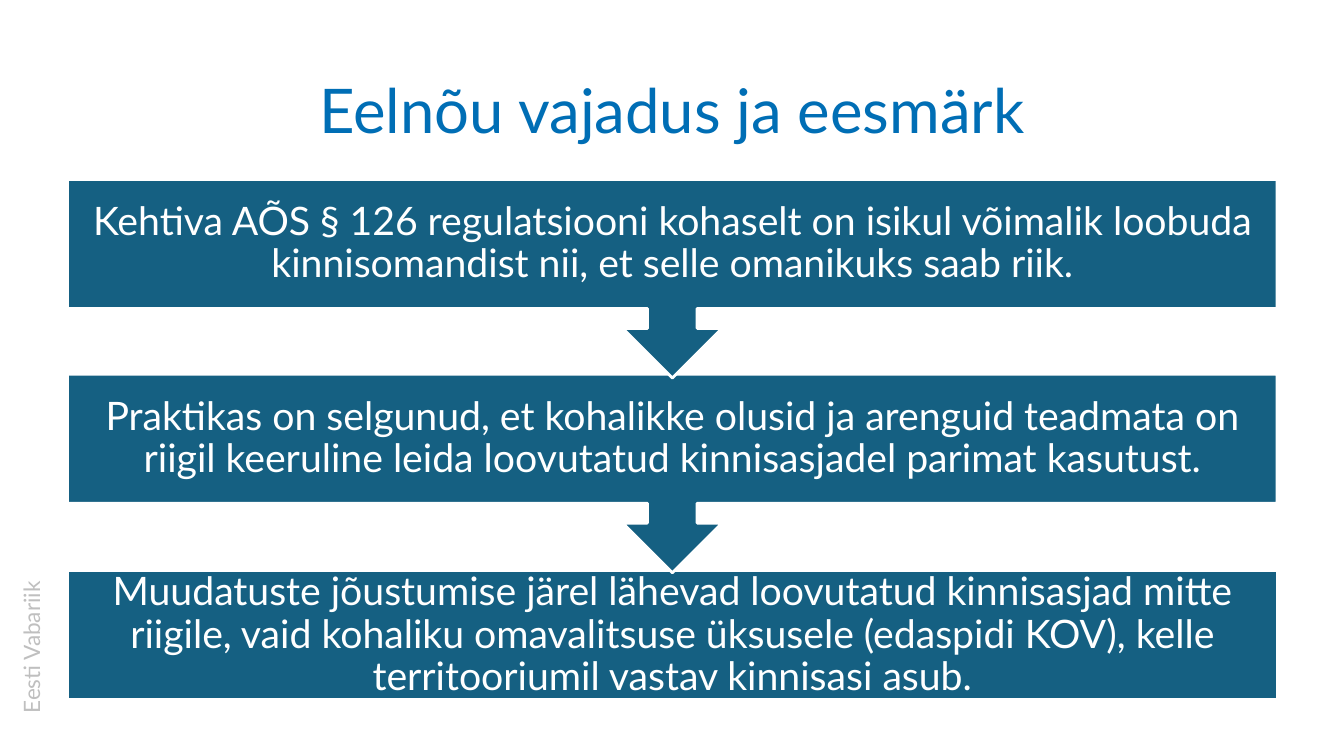
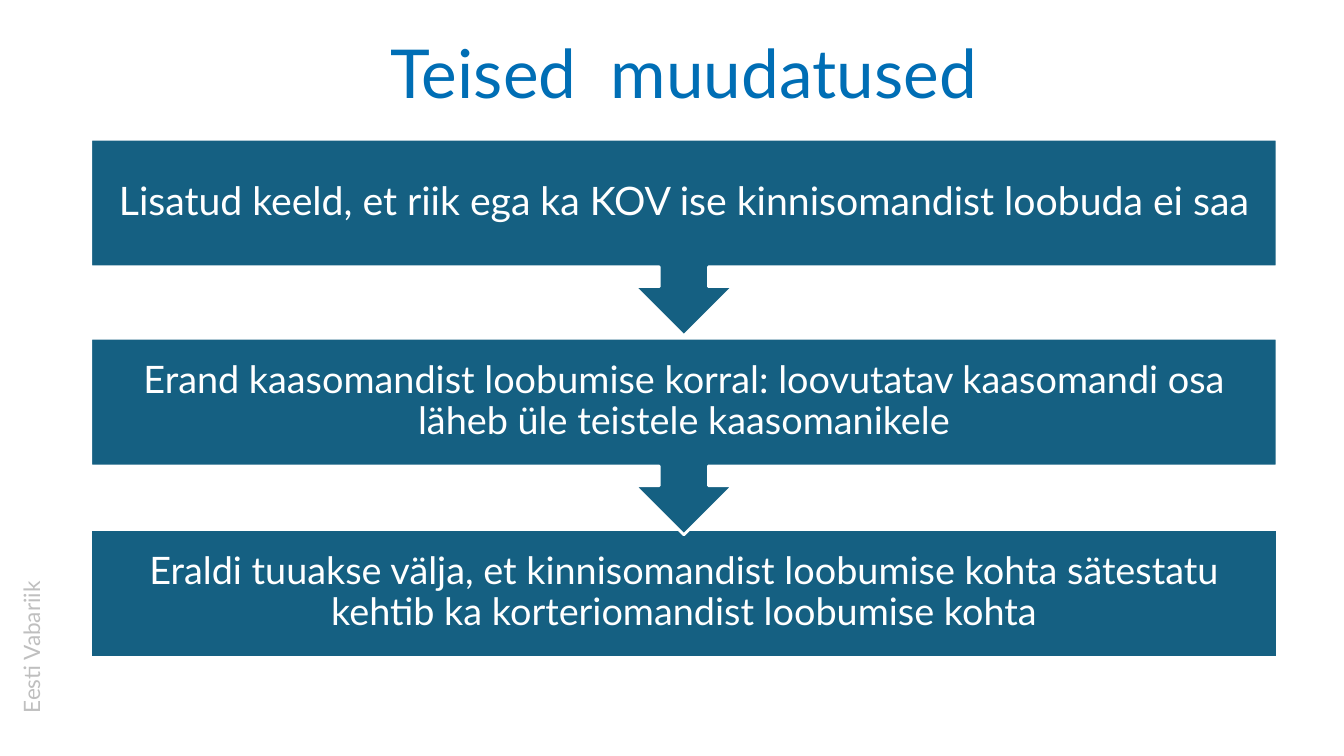
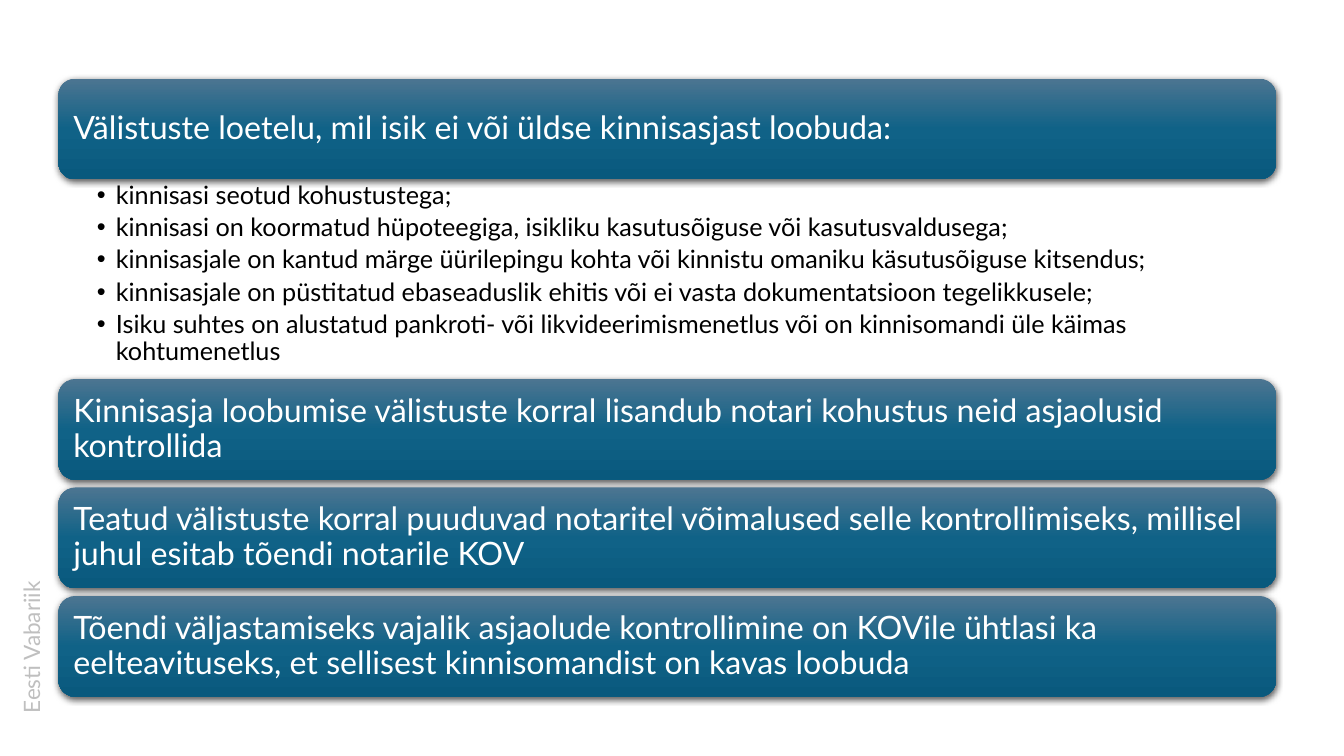
from lxml import etree
from pptx import Presentation
from pptx import util as u
from pptx.dml.color import RGBColor
from pptx.enum import shapes, text
from pptx.oxml.ns import qn

COLOURS = {
    "title": "006EB5",
    "box": "156082",
    "white": "FFFFFF",
    "black": "000000",
    "side": "BFBFBF",
    "bar_top": "4C7591",
    "bar_middle": "106287",
    "bar_bottom": "09597D",
}
FONT = "Lato"
KIND = shapes.MSO_SHAPE
ALIGN = text.PP_ALIGN
ANCHOR = text.MSO_ANCHOR


def colour(name):
    return RGBColor.from_string(COLOURS[name])


def write(frame, words, size=18, ink="white", align=ALIGN.LEFT, anchor=ANCHOR.MIDDLE,
          insets=(7.2, 3.6, 7.2, 3.6), spacing=0.9, after=0, bullet_indent=0):
    frame.word_wrap = True
    frame.auto_size = text.MSO_AUTO_SIZE.NONE
    frame.vertical_anchor = anchor
    frame.margin_left, frame.margin_top, frame.margin_right, frame.margin_bottom = map(u.Pt, insets)
    frame.text = words
    for para in frame.paragraphs:
        para.alignment = align
        para.line_spacing = spacing
        para.space_before = u.Pt(0)
        para.space_after = u.Pt(after)
        for span in para.runs:
            span.font.name = FONT
            span.font.size = u.Pt(size)
            span.font.color.rgb = colour(ink)
        if bullet_indent:
            props = para._p.get_or_add_pPr()
            props.set("marL", str(u.Pt(bullet_indent)))
            props.set("indent", str(-u.Pt(bullet_indent)))
            etree.SubElement(props, qn("a:buChar"), char="•")


class Deck:
    def __init__(self):
        self.deck = Presentation()
        self.deck.slide_width, self.deck.slide_height = u.Pt(960), u.Pt(540)
        self.page = None

    def add_page(self, layout):
        self.page = self.deck.slides.add_slide(self.deck.slide_layouts.get_by_name(layout))
        box = self.page.shapes.add_textbox(*map(u.Pt, (-38.16, 442.8, 120.96, 26.64)))
        box.rotation = 270
        write(box.text_frame, "Eesti Vabariik", size=16.1, ink="side",
              anchor=ANCHOR.TOP, spacing=1)

    def place(self, box, area):
        box.left, box.top, box.width, box.height = map(u.Pt, area)

    def title(self, words, area, size):
        box = self.page.shapes.title
        self.place(box, area)
        write(box.text_frame, words, size=size, ink="title", align=ALIGN.CENTER)

    def bullets(self, items, area):
        box = self.page.placeholders[1]
        self.place(box, area)
        write(box.text_frame, "\n".join(items), ink="black", anchor=ANCHOR.TOP,
              insets=(27.36, 2.16, 12.96, 2.16), after=3.6, bullet_indent=13.68)

    def shape(self, kind, area):
        box = self.page.shapes.add_shape(kind, *map(u.Pt, area))
        box.shadow.inherit = False
        return box

    def step(self, kind, words, area, size):
        box = self.shape(kind, area)
        box.fill.solid()
        box.fill.fore_color.rgb = colour("box")
        box.line.color.rgb = colour("white")
        box.line.width = u.Pt(2)
        write(box.text_frame, words, size=size, align=ALIGN.CENTER, insets=(15.6,) * 4)

    def flow(self, steps, left, width, box_height, callout_height):
        last = len(steps) - 1
        for index, (top, size, words) in reversed(list(enumerate(steps))):
            kind, height = ((KIND.RECTANGLE, box_height) if index == last
                            else (KIND.DOWN_ARROW_CALLOUT, callout_height))
            self.step(kind, words, (left, top, width, height), size)

    def bar(self, words, area):
        box = self.shape(KIND.ROUNDED_RECTANGLE, area)
        box.line.fill.background()
        box.fill.gradient()
        box.fill.gradient_angle = 270
        props = box._element.spPr
        stops = props.find(".//" + qn("a:gsLst"))
        for stop in list(stops):
            stops.remove(stop)
        for place, name in ((0, "bar_top"), (50000, "bar_middle"), (100000, "bar_bottom")):
            stop = etree.SubElement(stops, qn("a:gs"), pos=str(place))
            etree.SubElement(stop, qn("a:srgbClr"), val=COLOURS[name])
        shadow = etree.SubElement(props.find(qn("a:effectLst")), qn("a:outerShdw"),
                                  blurRad=str(u.Pt(4.5)), dist=str(u.Pt(1.5)),
                                  dir="5400000", algn="ctr", rotWithShape="0")
        ink = etree.SubElement(shadow, qn("a:srgbClr"), val=COLOURS["black"])
        etree.SubElement(ink, qn("a:alpha"), val="63000")
        write(box.text_frame, words, size=23, insets=(7.2,) * 4)


def main():
    deck = Deck()

    deck.add_page("Title Only")
    deck.title("Eelnõu vajadus ja eesmärk", (66.24, 28.8, 828, 104.4), 44)
    deck.flow([
        (128.2, 28, "Kehtiva AÕS § 126 regulatsiooni kohaselt on isikul võimalik loobuda "
                    "kinnisomandist nii, et selle omanikuks saab riik."),
        (267.3, 28, "Praktikas on selgunud, et kohalikke olusid ja arenguid teadmata on riigil "
                    "keeruline leida loovutatud kinnisasjadel parimat kasutust."),
        (407.7, 28, "Muudatuste jõustumise järel lähevad loovutatud kinnisasjad mitte riigile, "
                    "vaid kohaliku omavalitsuse üksusele (edaspidi KOV), kelle territooriumil "
                    "vastav kinnisasi asub."),
    ], left=48.24, width=864, box_height=92.16, callout_height=141.84)

    deck.add_page("Title Only")
    deck.title("Teised  muudatused", (64.8, 21.6, 847.44, 66.24), 48.2)
    deck.flow([
        (99.4, 28, "Lisatud keeld, et riik ega ka KOV ise kinnisomandist loobuda ei saa"),
        (241.6, 27, "Erand kaasomandist loobumise korral: loovutatav kaasomandi osa läheb üle "
                    "teistele kaasomanikele"),
        (378, 27, "Eraldi tuuakse välja, et kinnisomandist loobumise kohta sätestatu kehtib ka "
                  "korteriomandist loobumise kohta"),
    ], left=64.8, width=847.44, box_height=91.44, callout_height=140.4)

    deck.add_page("Title and Content")
    title = deck.page.shapes.title._element
    title.getparent().remove(title)
    left, width, height = 41.76, 869.76, 72
    deck.bar("Välistuste loetelu, mil isik ei või üldse kinnisasjast loobuda:",
             (left, 56.16, width, height))
    deck.bullets([
        "kinnisasi seotud kohustustega;",
        "kinnisasi on koormatud hüpoteegiga, isikliku kasutusõiguse või kasutusvaldusega;",
        "kinnisasjale on kantud märge üürilepingu kohta või kinnistu omaniku käsutusõiguse "
        "kitsendus;",
        "kinnisasjale on püstitatud ebaseaduslik ehitis või ei vasta dokumentatsioon "
        "tegelikkusele;",
        "Isiku suhtes on alustatud pankroti- või likvideerimismenetlus või on kinnisomandi "
        "üle käimas kohtumenetlus",
    ], (left, 128.16, width, 142.56))
    for index, words in enumerate([
        "Kinnisasja loobumise välistuste korral lisandub notari kohustus neid asjaolusid "
        "kontrollida",
        "Teatud välistuste korral puuduvad notaritel võimalused selle kontrollimiseks, "
        "millisel juhul esitab tõendi notarile KOV",
        "Tõendi väljastamiseks vajalik asjaolude kontrollimine on KOVile ühtlasi ka "
        "eelteavituseks, et sellisest kinnisomandist on kavas loobuda",
    ]):
        deck.bar(words, (left, 270.72 + index * 77.5, width, height))

    deck.deck.save("out.pptx")


if __name__ == "__main__":
    main()
